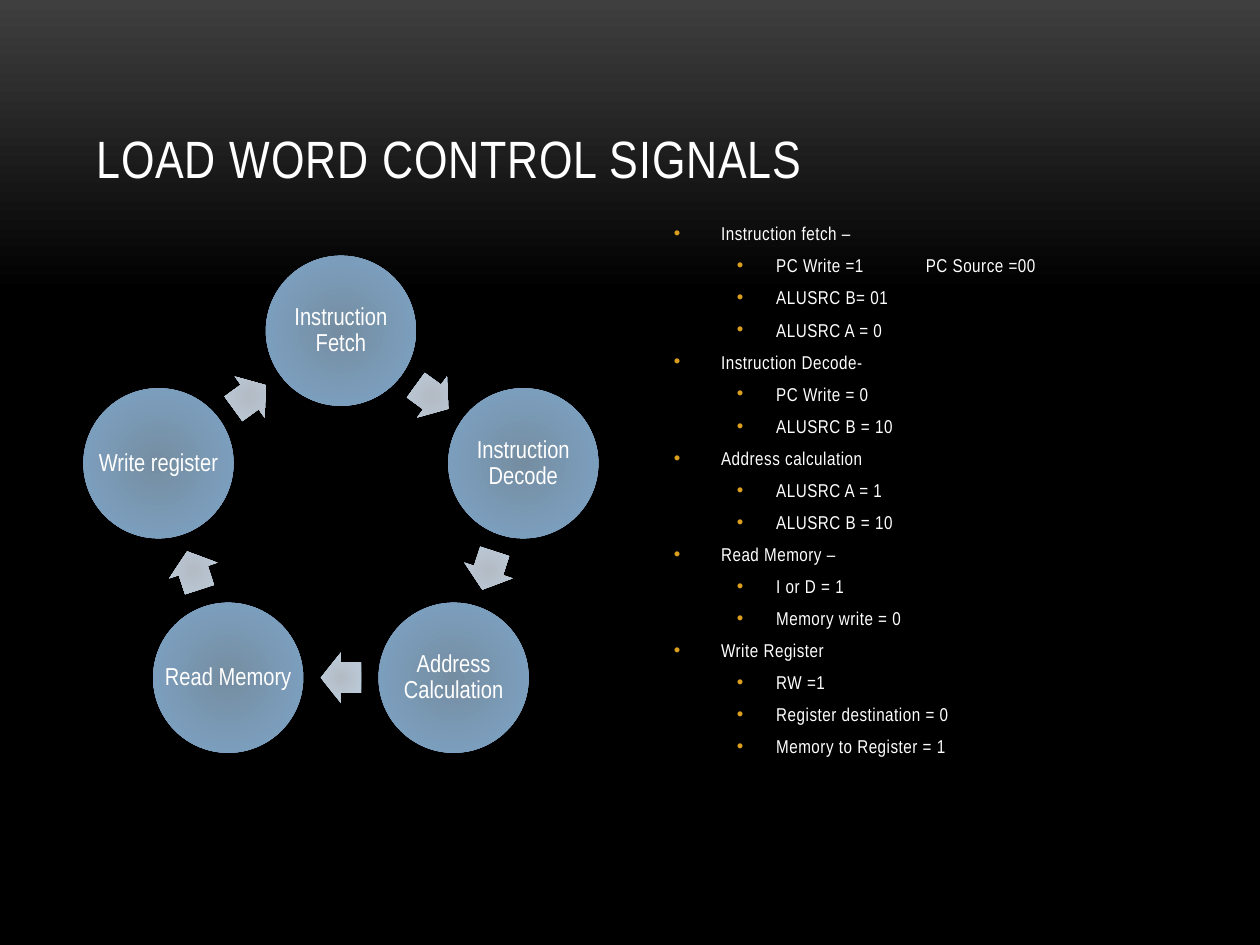
from dataclasses import dataclass
from math import cos, pi, radians, sin

import pptx
from pptx import util as u
from pptx import oxml
from pptx.dml.color import RGBColor
from pptx.enum import shapes, text
from pptx.oxml import ns

WHITE = RGBColor(0xFF, 0xFF, 0xFF)
BLACK = RGBColor(0x00, 0x00, 0x00)
CHARCOAL = RGBColor(0x3F, 0x3F, 0x3F)
AMBER = RGBColor(0xDC, 0x9E, 0x1F)
STEEL = RGBColor(0x75, 0x8D, 0xA1)
SKY = RGBColor(0x7F, 0xA6, 0xCA)
ASH = RGBColor(0xB3, 0xBB, 0xC4)
MIST = RGBColor(0xBF, 0xCF, 0xE0)

FONT = "Arial Narrow"
DOWNWARD = '<a:lin ang="5400000" scaled="0"/>'
RADIAL = ('<a:path path="circle"><a:fillToRect l="100000" t="100000" '
          'r="100000" b="100000"/></a:path>')

CENTRE_X, CENTRE_Y = 194.8, 298.6
RING_RADIUS = 109.6
CIRCLE_SIZE = 85.8
ARROW_WIDTH, ARROW_HEIGHT = 23, 29
STEPS = ["Instruction Fetch", "Instruction Decode", "Address Calculation",
         "Read Memory", "Write register"]


@dataclass(frozen=True)
class Area:
    left: float
    top: float
    width: float
    height: float

    def lengths(self) -> list:
        return [u.Pt(side) for side in
                (self.left, self.top, self.width, self.height)]


@dataclass(frozen=True)
class Level:
    margin: float
    indent: float


@dataclass(frozen=True)
class Stage:
    heading: str
    signals: tuple


LEVELS = [Level(27, -27), Level(58.5, -22.5)]
STAGES = [
    Stage("Instruction fetch –",
          ("PC Write =1\tPC Source =00", "ALUSRC B= 01", "ALUSRC A = 0")),
    Stage("Instruction Decode-", ("PC Write = 0", "ALUSRC B = 10")),
    Stage("Address calculation", ("ALUSRC A = 1", "ALUSRC B = 10")),
    Stage("Read Memory –", ("I or D = 1", "Memory write = 0")),
    Stage("Write Register",
          ("RW =1", "Register destination = 0", "Memory to Register = 1")),
]


def apply_format(target, values: dict) -> None:
    for name, value in values.items():
        setattr(target, name, value)


def set_gradient(owner, stops: list, direction: str) -> None:
    marks = "".join(f'<a:gs pos="{place * 1000}"><a:srgbClr val="{color}"/></a:gs>'
                    for place, color in stops)
    gradient = oxml.parse_xml(f'<a:gradFill {ns.nsdecls("a")} rotWithShape="1">'
                              f'<a:gsLst>{marks}</a:gsLst>{direction}</a:gradFill>')
    solid = owner.find(ns.qn("a:solidFill"))
    owner.replace(solid, gradient)


def paint_background(page) -> None:
    page.background.fill.solid()
    owner = page.element.find(".//" + ns.qn("p:bgPr"))
    set_gradient(owner, [(0, CHARCOAL), (31, BLACK), (100, BLACK)], DOWNWARD)


def add_text_frame(page, area: Area, **values):
    frame = page.shapes.add_textbox(*area.lengths()).text_frame
    apply_format(frame, {"word_wrap": True, **values})
    return frame


def write(para, content: str, size: float, tracking: float = 0) -> None:
    span = para.add_run()
    span.text = content
    apply_format(span.font, {"name": FONT, "size": u.Pt(size)})
    span.font.color.rgb = WHITE
    if tracking:
        span.font._element.set("spc", str(round(tracking * 100)))


def add_bullet(para, level: Level) -> None:
    properties = para._p.get_or_add_pPr()
    properties.set("marL", str(u.Pt(level.margin)))
    properties.set("indent", str(u.Pt(level.indent)))
    for markup in (f'<a:buClr {ns.nsdecls("a")}><a:srgbClr val="{AMBER}"/></a:buClr>',
                   f'<a:buFont {ns.nsdecls("a")} typeface="Arial"/>',
                   f'<a:buChar {ns.nsdecls("a")} char="•"/>',
                   f'<a:tabLst {ns.nsdecls("a")}><a:tab pos="{u.Pt(144)}" algn="l"/></a:tabLst>'):
        properties.append(oxml.parse_xml(markup))


def add_signals(page, area: Area) -> None:
    frame = add_text_frame(page, area)
    lines = [(content, depth) for stage in STAGES
             for content, depth in [(stage.heading, 0),
                                    *((signal, 1) for signal in stage.signals)]]
    for index, (content, depth) in enumerate(lines):
        para = frame.add_paragraph() if index else frame.paragraphs[0]
        add_bullet(para, LEVELS[depth])
        apply_format(para, {"level": depth, "line_spacing": 0.8,
                            "space_before": u.Pt(2.12 if index else 0),
                            "space_after": u.Pt(6)})
        write(para, content, 10.6, 0.3)


def area_on_ring(angle: float, radius: float, width: float, height: float) -> Area:
    x = CENTRE_X + radius * sin(radians(angle))
    y = CENTRE_Y - radius * cos(radians(angle))
    return Area(x - width / 2, y - height / 2, width, height)


def add_gradient_shape(page, kind, area: Area, inner: RGBColor, outer: RGBColor):
    shape = page.shapes.add_shape(kind, *area.lengths())
    shape.shadow.inherit = False
    shape.line.fill.background()
    shape.fill.solid()
    set_gradient(shape.element.spPr, [(0, inner), (100, outer)], RADIAL)
    return shape


def add_step(page, label: str, angle: float) -> None:
    area = area_on_ring(angle, RING_RADIUS, CIRCLE_SIZE, CIRCLE_SIZE)
    add_gradient_shape(page, shapes.MSO_SHAPE.OVAL, area, STEEL, SKY)
    sides = ("left", "top", "right", "bottom")
    frame = add_text_frame(page, area, vertical_anchor=text.MSO_ANCHOR.MIDDLE,
                           **{f"margin_{side}": u.Pt(1.4) for side in sides})
    para = frame.paragraphs[0]
    apply_format(para, {"alignment": text.PP_ALIGN.CENTER, "line_spacing": 0.9})
    write(para, label, 14)


def add_arrow(page, angle: float) -> None:
    apothem = RING_RADIUS * cos(pi / len(STEPS))
    area = area_on_ring(angle, apothem, ARROW_WIDTH, ARROW_HEIGHT)
    arrow = add_gradient_shape(page, shapes.MSO_SHAPE.RIGHT_ARROW, area, ASH, MIST)
    arrow.adjustments[0] = 0.6
    arrow.rotation = angle


def add_cycle(page) -> None:
    turn = 360 / len(STEPS)
    for index, label in enumerate(STEPS):
        add_step(page, label, index * turn)
        add_arrow(page, (index + 0.5) * turn)


def main() -> None:
    deck = pptx.Presentation()
    apply_format(deck, {"slide_width": u.Pt(720), "slide_height": u.Pt(540)})
    page = deck.slides.add_slide(deck.slide_layouts[6])
    paint_background(page)
    add_signals(page, Area(378, 126, 294, 343.5))
    add_cycle(page)
    title = add_text_frame(page, Area(48, 21.6, 624, 90),
                           vertical_anchor=text.MSO_ANCHOR.BOTTOM)
    write(title.paragraphs[0], "LOAD WORD CONTROL SIGNALS", 30, 0.5)
    deck.save("out.pptx")


if __name__ == "__main__":
    main()
